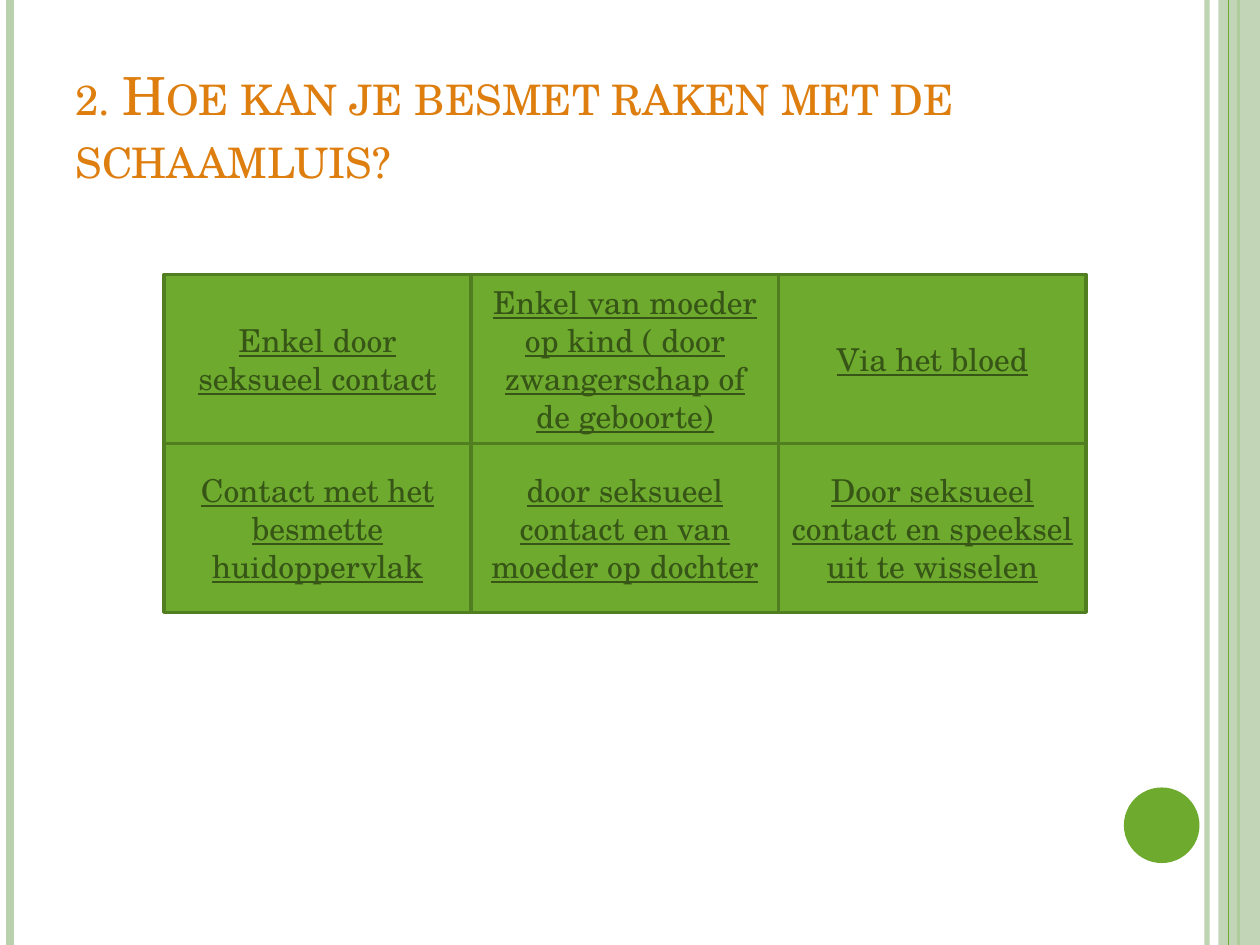
from typing import NamedTuple

from lxml import etree
from pptx import Presentation
from pptx.dml.color import RGBColor
from pptx.enum.shapes import MSO_CONNECTOR, MSO_SHAPE
from pptx.enum.text import MSO_ANCHOR, MSO_AUTO_SIZE, PP_ALIGN
from pptx.oxml.ns import qn
from pptx.util import Inches, Pt

RECT, OVAL = MSO_SHAPE.RECTANGLE, MSO_SHAPE.OVAL
STRAIGHT = MSO_CONNECTOR.STRAIGHT
MIDDLE, BOTTOM = MSO_ANCHOR.MIDDLE, MSO_ANCHOR.BOTTOM
LEFT, CENTER = PP_ALIGN.LEFT, PP_ALIGN.CENTER
NO_FIT = MSO_AUTO_SIZE.NONE

FONT = "TeX Gyre Schola"
COLORS = {
    "title": "DD7E0E",
    "pale": "BAD1AD",
    "green": "6DAA2D",
    "border": "517E21",
    "answer": "365516",
}
WIDTH, HEIGHT = 10, 7.5
GRID_LEFT, GRID_TOP = 1.3, 2.18
CELL_WIDTH, CELL_HEIGHT = 2.44, 1.34


class Stripe(NamedTuple):
    x: float
    color: str
    weight: float
    opacity: int = 100


class Box(NamedTuple):
    left: float
    top: float
    width: float
    height: float


BACK_STRIPES = [
    Stripe(9.58, "pale", 3, 93),
    Stripe(0.08, "pale", 4.5),
    Stripe(9.83, "green", 1.5),
]
FRONT_STRIPE = Stripe(9.75, "green", 0.75)
SIDE_BAND = Box(9.67, 0, 0.33, HEIGHT)
DOT = Box(8.92, 6.25, 0.6, 0.6)
TITLE = Box(0.5, 0.3, 8.17, 1.25)
ANSWERS = [
    [
        "Enkel door seksueel contact",
        "Enkel van moeder op kind ( door zwangerschap of de geboorte)",
        "Via het bloed",
    ],
    [
        "Contact met het besmette huidoppervlak",
        "door seksueel contact en van moeder op dochter",
        "Door seksueel contact en speeksel uit te wisselen",
    ],
]


def rgb(name: str) -> RGBColor:
    return RGBColor.from_string(COLORS[name])


def set_opacity(sp, percent: int) -> None:
    color = next(sp._element.spPr.iter(qn("a:srgbClr")))
    etree.SubElement(color, qn("a:alpha")).set("val", str(percent * 1000))


def add_stripe(s, stripe: Stripe) -> None:
    x = Inches(stripe.x)
    sp = s.shapes.add_connector(STRAIGHT, x, 0, x, Inches(HEIGHT))
    sp.line.color.rgb = rgb(stripe.color)
    sp.line.width = Pt(stripe.weight)
    if stripe.opacity < 100:
        set_opacity(sp, stripe.opacity)
    etree.SubElement(sp._element.spPr, qn("a:effectLst"))


def add_shape(s, kind, box: Box, color: str):
    sp = s.shapes.add_shape(kind, *map(Inches, box))
    sp.shadow.inherit = False
    sp.fill.solid()
    sp.fill.fore_color.rgb = rgb(color)
    sp.line.fill.background()
    return sp


def write(sp, text: str, size: int, color: str, anchor, align):
    tf = sp.text_frame
    tf.text = text
    tf.word_wrap = True
    tf.auto_size = NO_FIT
    tf.vertical_anchor = anchor
    p = tf.paragraphs[0]
    p.alignment = align
    p.font.name = FONT
    p.font.size = Pt(size)
    p.font.color.rgb = rgb(color)
    return p


def add_answer(s, row: int, col: int, text: str) -> None:
    box = Box(GRID_LEFT + col * CELL_WIDTH, GRID_TOP + row * CELL_HEIGHT,
              CELL_WIDTH, CELL_HEIGHT)
    sp = add_shape(s, RECT, box, "green")
    sp.line.color.rgb = rgb("border")
    sp.line.width = Pt(2)
    p = write(sp, text, 18, "answer", MIDDLE, CENTER)
    p.font.underline = True


def add_title(s, text: str) -> None:
    sp = s.shapes.title
    sp.left, sp.top, sp.width, sp.height = map(Inches, TITLE)
    p = write(sp, text, 30, "title", BOTTOM, LEFT)
    p.runs[0]._r.get_or_add_rPr().set("cap", "small")


def main() -> None:
    prs = Presentation()
    prs.slide_width, prs.slide_height = Inches(WIDTH), Inches(HEIGHT)
    s = prs.slides.add_slide(prs.slide_layouts[5])
    for stripe in BACK_STRIPES:
        add_stripe(s, stripe)
    set_opacity(add_shape(s, RECT, SIDE_BAND, "pale"), 87)
    add_stripe(s, FRONT_STRIPE)
    add_shape(s, OVAL, DOT, "green")
    add_title(s, "2. Hoe kan je besmet raken met de schaamluis?")
    for row, texts in enumerate(ANSWERS):
        for col, text in enumerate(texts):
            add_answer(s, row, col, text)
    prs.save("out.pptx")


if __name__ == "__main__":
    main()
